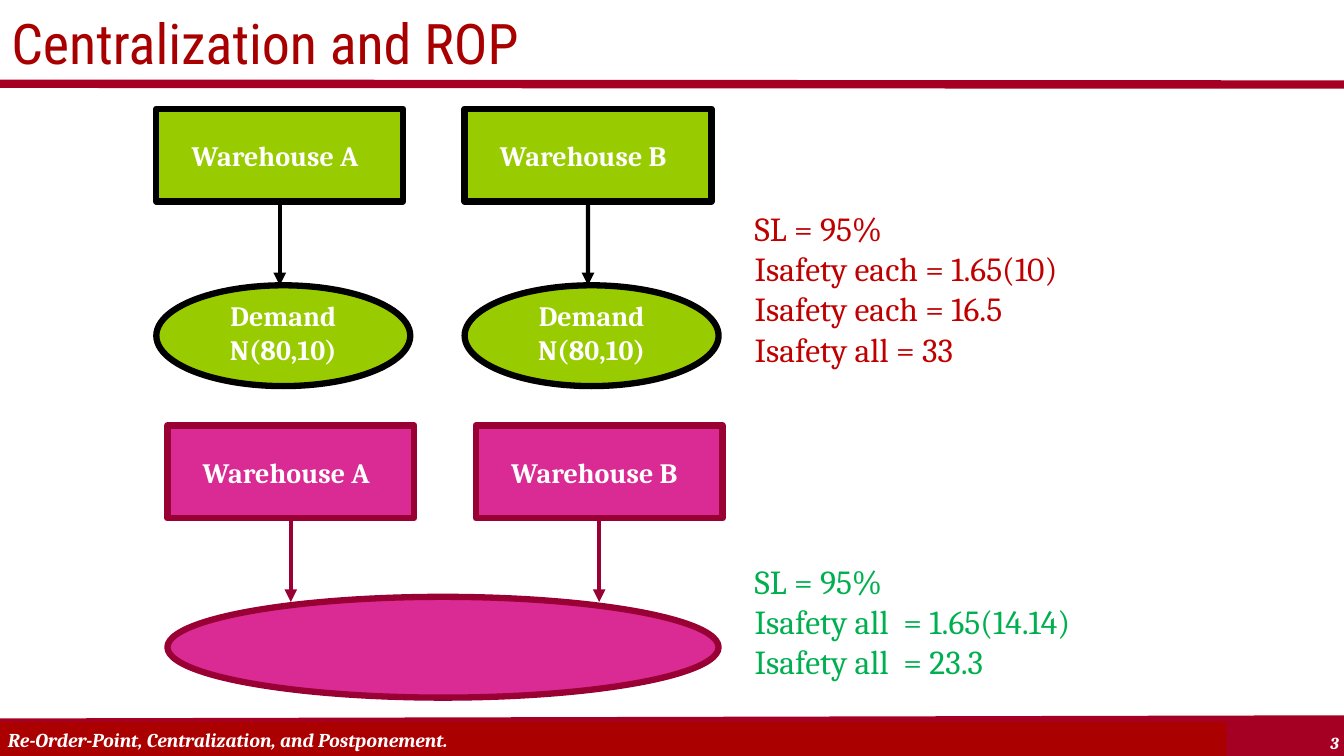
from lxml import etree
from pptx import Presentation
from pptx.dml.color import RGBColor
from pptx.enum.shapes import MSO_CONNECTOR, MSO_SHAPE
from pptx.enum.text import MSO_ANCHOR, PP_ALIGN
from pptx.oxml.ns import qn
from pptx.util import Cm, Pt

STRAIGHT = MSO_CONNECTOR.STRAIGHT
RECT, OVAL = MSO_SHAPE.RECTANGLE, MSO_SHAPE.OVAL
TOP, MIDDLE, BOTTOM = MSO_ANCHOR.TOP, MSO_ANCHOR.MIDDLE, MSO_ANCHOR.BOTTOM
LEFT, CENTER, RIGHT = PP_ALIGN.LEFT, PP_ALIGN.CENTER, PP_ALIGN.RIGHT

COLORS = {
    "title": "A80000", "rule": "A50023", "footer": "AA0000", "white": "FFFFFF",
    "lime": "99CC00", "black": "000000", "pink": "DA2A93", "wine": "990033",
    "red": "C00000", "green": "00B050",
}
BODY, HEADING = "Cambria", "Roboto Condensed"
SLIDE_W, SLIDE_H = 33.87, 19.05
BOX_W, BOX_H, BOX_STEP = 6.22, 2.34, 7.77
ARROW_END = 4.45
OVAL_H = 2.54


def rgb(name):
    """Return the named colour."""
    return RGBColor.from_string(COLORS[name])


def write(tf, lines, size, color, align=LEFT, anchor=TOP, font=BODY, bold=False, italic=False):
    """Fill a text frame with one paragraph per line."""
    tf.word_wrap = True
    tf.vertical_anchor = anchor
    for i, line in enumerate(lines):
        p = tf.add_paragraph() if i else tf.paragraphs[0]
        p.text = line
        p.alignment = align
        p.font.name, p.font.size = font, Pt(size)
        p.font.bold, p.font.italic = bold, italic
        p.font.color.rgb = rgb(color)


def add_block(s, kind, x, y, w, h, fill, line=None):
    """Add a filled preset shape, outlined if a line colour is given."""
    sp = s.shapes.add_shape(kind, Cm(x), Cm(y), Cm(w), Cm(h))
    sp.shadow.inherit = False
    sp.fill.solid()
    sp.fill.fore_color.rgb = rgb(fill)
    if line:
        sp.line.color.rgb = rgb(line)
        sp.line.width = Pt(4.5)
    else:
        sp.line.fill.background()
    return sp


def add_line(s, x1, y1, x2, y2, color, width, arrow=False):
    """Add a straight line, with an arrowhead at its end if asked."""
    cxn = s.shapes.add_connector(STRAIGHT, Cm(x1), Cm(y1), Cm(x2), Cm(y2))
    cxn.line.color.rgb = rgb(color)
    cxn.line.width = Pt(width)
    if arrow:
        etree.SubElement(cxn.line._get_or_add_ln(), qn("a:tailEnd"), type="triangle")
    etree.SubElement(cxn._element.spPr, qn("a:effectLst"))
    return cxn


def add_title(s, text, x, y, w, h):
    """Place the title and the rule below it."""
    title = s.shapes.title
    title.left, title.top, title.width, title.height = Cm(x), Cm(y), Cm(w), Cm(h)
    write(title.text_frame, [text], 40, "title", anchor=MIDDLE, font=HEADING)
    add_line(s, 0, y + h, SLIDE_W, y + h + 0.02, "rule", 6)


def add_footer(s, text, number, x, y, w, h):
    """Draw the footer band with its text and slide number."""
    add_line(s, x, y + 0.43, SLIDE_W + 0.06, y + 0.35, "rule", 29.25)
    num = s.shapes.add_textbox(Cm(31.45), Cm(y + 0.15), Cm(2.54), Cm(0.76))
    write(num.text_frame, [number], 12, "white", RIGHT, bold=True, italic=True)
    band = add_block(s, RECT, x, y, w, h, "footer")
    write(band.text_frame, [text], 14, "white", anchor=BOTTOM, bold=True, italic=True)


def add_warehouse(s, name, x, y, fill, line):
    """Draw a warehouse box with its arrow down to demand."""
    box = add_block(s, RECT, x, y, BOX_W, BOX_H, fill, line)
    box.text_frame.margin_left = Cm(0.89)
    write(box.text_frame, [name], 20, "white", anchor=MIDDLE, bold=True)
    mid = x + BOX_W / 2
    arrow = add_line(s, mid, y + BOX_H, mid, y + ARROW_END, line, 3, arrow=True)
    arrow.begin_connect(box, 2)


def add_separate(s, names, x, y, fill, line):
    """Draw warehouses that each serve their own demand."""
    for i, name in enumerate(names):
        left = x + i * BOX_STEP
        demand = add_block(s, OVAL, left, y + ARROW_END, 6.4, OVAL_H, fill, line)
        demand.text_frame.margin_bottom = Cm(0.3)
        write(demand.text_frame, ["Demand N(80,10)"], 20, "white", CENTER, MIDDLE, bold=True)
        add_warehouse(s, name, left, y, fill, line)


def add_pooled(s, names, x, y, fill, line):
    """Draw warehouses that share one pooled demand."""
    add_block(s, OVAL, x, y + 4.32, 13.89, OVAL_H, fill, line)
    for i, name in enumerate(names):
        add_warehouse(s, name, x + i * BOX_STEP, y, fill, line)


def add_formulas(s, lines, x, y, w, h, color):
    """Write the safety stock calculation."""
    box = s.shapes.add_textbox(Cm(x), Cm(y), Cm(w), Cm(h))
    write(box.text_frame, lines, 24, color)


def main():
    """Build and save the slide."""
    prs = Presentation()
    prs.slide_width, prs.slide_height = Cm(SLIDE_W), Cm(SLIDE_H)
    s = prs.slides.add_slide(prs.slide_layouts[5])
    names = ["Warehouse A", "Warehouse B"]
    add_title(s, "Centralization and ROP", 0.03, 0.03, 33.83, 2.08)
    add_footer(s, "Re-Order-Point, Centralization, and Postponement.", "3",
               -0.05, 18.19, 30.96, 0.86)
    add_separate(s, names, 3.94, 2.74, "lime", "black")
    add_formulas(s, ["SL = 95%", "Isafety each = 1.65(10)", "Isafety each = 16.5",
                     "Isafety all = 33"], 18.77, 5.11, 11.91, 5.38, "red")
    add_pooled(s, names, 4.22, 10.72, "pink", "wine")
    add_formulas(s, ["SL = 95%", "Isafety all  = 1.65(14.14)", "Isafety all  = 23.3"],
                 18.77, 14, 9.91, 3.33, "green")
    prs.save("out.pptx")


if __name__ == "__main__":
    main()
